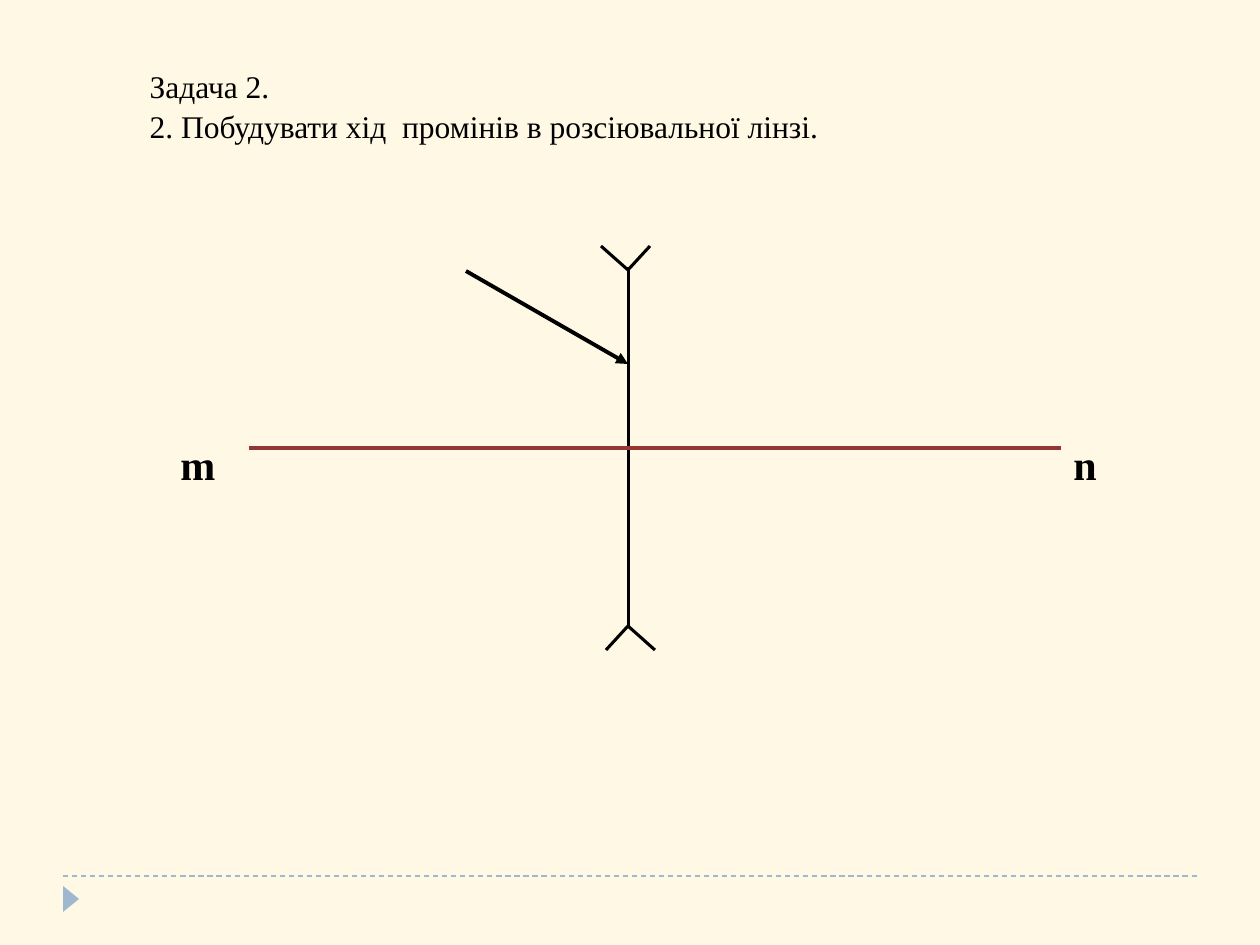
"""Build a slide with a ray construction task for a diverging lens."""
from lxml.etree import SubElement
from pptx import Presentation
from pptx.dml.color import RGBColor
from pptx.enum.dml import MSO_LINE_DASH_STYLE as Dash
from pptx.enum.shapes import MSO_CONNECTOR as Connector, MSO_SHAPE as Shape
from pptx.enum.text import MSO_ANCHOR as Anchor, MSO_AUTO_SIZE as AutoSize, PP_ALIGN as Align
from pptx.oxml.ns import qn
from pptx.util import Pt

PX = 914400 / 126
CREAM = RGBColor(0xFE, 0xF8, 0xE4)
BLUE = RGBColor(0x9F, 0xB8, 0xCD)
BLACK = RGBColor(0, 0, 0)
RED = RGBColor(0x94, 0x36, 0x34)


def add_line(start, end, color, width):
    line = page.shapes.add_connector(Connector.STRAIGHT, *[round(v * PX) for v in start + end])
    line.line.color.rgb = color
    line.line.width = Pt(width)
    SubElement(line._element.spPr, qn("a:effectLst"))
    return line


def write_text(box, lines, spacing, font):
    frame = box.text_frame
    frame.text = "\n".join(lines)
    frame.word_wrap = True
    frame.auto_size = AutoSize.NONE
    frame.vertical_anchor = Anchor.TOP
    for para in frame.paragraphs:
        para.alignment = Align.LEFT
        para.line_spacing = spacing
        for span in para.runs:
            span.font.color.rgb = BLACK
            for name, value in font.items():
                setattr(span.font, name, value)


deck = Presentation()
deck.slide_width, deck.slide_height = round(1260 * PX), round(945 * PX)
page = deck.slides.add_slide(deck.slide_layouts[5])
page.background.fill.solid()
page.background.fill.fore_color.rgb = CREAM

footer_line = add_line((63, 876), (1197, 876), BLUE, 0.75)
footer_line.line.dash_style = Dash.DASH
marker = page.shapes.add_shape(Shape.ISOSCELES_TRIANGLE, *[round(v * PX) for v in (58, 891, 26, 16)])
marker.rotation = 90
marker.shadow.inherit = False
marker.fill.solid()
marker.fill.fore_color.rgb = BLUE
marker.line.fill.background()

title = page.shapes.title
title_place = {"left": 137, "top": 59, "width": 1082, "height": 127}
for name, value in title_place.items():
    setattr(title, name, round(value * PX))
task = ["Задача 2.", "2. Побудувати хід  промінів в розсіювальної лінзі."]
write_text(title, task, 1.05, {"name": "Times New Roman", "size": Pt(18), "bold": False})

add_line((629, 267), (629, 626), BLACK, 1.75)
add_line((249, 448), (1061, 448), RED, 2.5)
for tip, ends in (((628, 270), ((601, 246), (650, 246))), ((628, 626), ((606, 650), (655, 650)))):
    for end in ends:
        add_line(tip, end, BLACK, 1.75)

ray = add_line((466, 271), (628, 364), BLACK, 2.25)
SubElement(ray.line._get_or_add_ln(), qn("a:tailEnd"), type="triangle")

for label, left in (("m", 168), ("n", 1061)):
    box = page.shapes.add_textbox(*[round(v * PX) for v in (left, 427, 107, 88)])
    write_text(box, [label], 1.1, {"name": "Times New Roman", "size": Pt(24), "bold": True})

deck.save("out.pptx")
